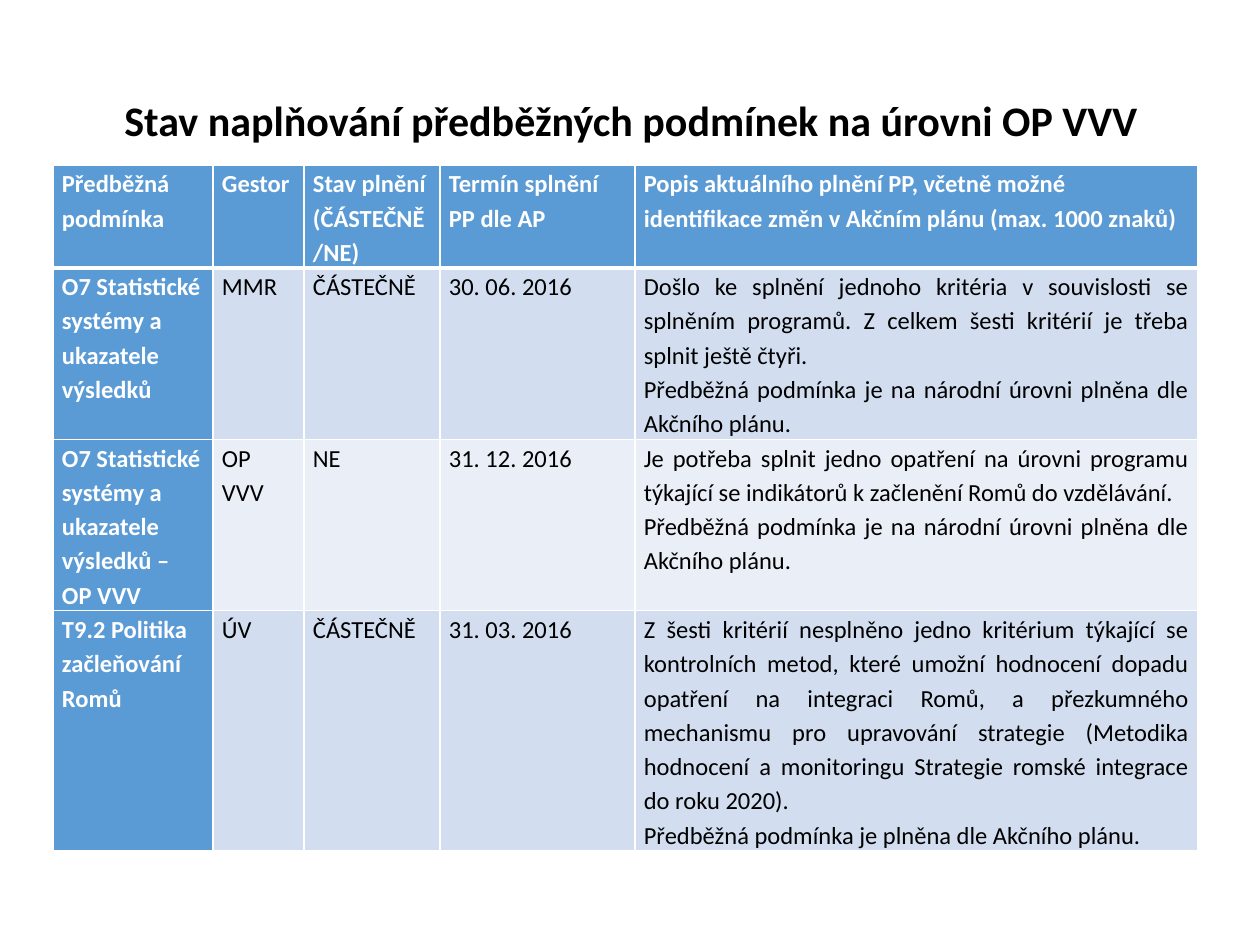
from lxml.etree import SubElement
from pptx import Presentation
from pptx.dml.color import RGBColor
from pptx.enum.text import MSO_ANCHOR, PP_ALIGN
from pptx.oxml.ns import qn
from pptx.util import Emu, Pt

PX_PER_INCH = 126
COLORS = {
    "text": "000000",
    "white": "FFFFFF",
    "accent": "5B9BD5",
    "band_dark": "D2DEEF",
    "band_light": "EAEFF7",
}

TITLE = "Stav naplňování předběžných podmínek na úrovni OP VVV"
COLUMN_WIDTHS = [160, 91, 136, 195, 563]
ROW_HEIGHTS = [89, 150, 150, 210]
HEADER_JUSTIFIED = {0, 2}
BODY_JUSTIFIED = {2, 4}
NATIONAL_LEVEL = "Předběžná podmínka je na národní úrovni plněna dle Akčního plánu."
CONDITIONS = [
    ["Předběžná podmínka", "Gestor", "Stav plnění\n(ČÁSTEČNĚ/NE)",
     "Termín splnění PP dle AP",
     "Popis aktuálního plnění PP, včetně možné identifikace změn "
     "v Akčním plánu (max. 1000 znaků)"],
    ["O7 Statistické systémy a ukazatele výsledků", "MMR", "ČÁSTEČNĚ",
     "30. 06. 2016",
     "Došlo ke splnění jednoho kritéria v souvislosti se splněním programů. "
     "Z celkem šesti kritérií je třeba splnit ještě čtyři.\n" + NATIONAL_LEVEL],
    ["O7 Statistické systémy a ukazatele výsledků – OP VVV", "OP VVV", "NE",
     "31. 12. 2016",
     "Je potřeba splnit jedno opatření na úrovni programu týkající se "
     "indikátorů k začlenění Romů do vzdělávání.\n" + NATIONAL_LEVEL],
    ["T9.2 Politika začleňování Romů", "ÚV", "ČÁSTEČNĚ", "31. 03. 2016",
     "Z šesti kritérií nesplněno jedno kritérium týkající se kontrolních metod, "
     "které umožní hodnocení dopadu opatření na integraci Romů, a přezkumného "
     "mechanismu pro upravování strategie (Metodika hodnocení a monitoringu "
     "Strategie romské integrace do roku 2020).\n"
     "Předběžná podmínka je plněna dle Akčního plánu."],
]


def px(length):
    return Emu(round(length * 914400 / PX_PER_INCH))


def rgb(color):
    return RGBColor.from_string(COLORS[color])


def write(frame, text, *, size, color="text", bold=False,
          align=PP_ALIGN.LEFT, spacing=1.0):
    """Fill a text frame, one paragraph per line of text."""
    frame.word_wrap = True
    for index, line in enumerate(text.split("\n")):
        paragraph = frame.paragraphs[0] if index == 0 else frame.add_paragraph()
        paragraph.alignment = align
        paragraph.line_spacing = spacing
        run = paragraph.add_run()
        run.text = line
        run.font.name = "Calibri"
        run.font.size = Pt(size)
        run.font.bold = bold
        run.font.color.rgb = rgb(color)


def add_borders(cell, **widths):
    """Draw white cell borders; widths are points keyed by side."""
    properties = cell._tc.get_or_add_tcPr()
    for side in "LRTB":
        line = SubElement(properties, qn(f"a:ln{side}"),
                          w=str(Pt(widths.get(side, 1))))
        fill = SubElement(line, qn("a:solidFill"))
        SubElement(fill, qn("a:srgbClr"), val=COLORS["white"])


def place_title(slide, left, top, width, height):
    title = slide.shapes.title
    title.left, title.top = px(left), px(top)
    title.width, title.height = px(width), px(height)
    title.text_frame.vertical_anchor = MSO_ANCHOR.MIDDLE
    write(title.text_frame, TITLE, size=24, bold=True,
          align=PP_ALIGN.CENTER, spacing=0.9)


def format_cell(cell, text, row, column):
    is_heading = row == 0 or column == 0
    justified = HEADER_JUSTIFIED if row == 0 else BODY_JUSTIFIED
    cell.margin_left = cell.margin_right = px(9)
    cell.margin_top = cell.margin_bottom = 0
    add_borders(cell, T=3 if row == 1 else 1, B=3 if row == 0 else 1)
    cell.fill.solid()
    band = "band_dark" if row % 2 else "band_light"
    cell.fill.fore_color.rgb = rgb("accent" if is_heading else band)
    write(cell.text_frame, text, size=14, bold=is_heading, spacing=1.15,
          color="white" if is_heading else "text",
          align=PP_ALIGN.JUSTIFY if column in justified else PP_ALIGN.LEFT)


def add_conditions_table(slide, left, top, width, height):
    frame = slide.shapes.add_table(len(CONDITIONS), len(COLUMN_WIDTHS),
                                   px(left), px(top), px(width), px(height))
    table = frame.table
    table.first_col = True
    for column, column_width in zip(table.columns, COLUMN_WIDTHS):
        column.width = px(column_width)
    for row, row_height in zip(table.rows, ROW_HEIGHTS):
        row.height = px(row_height)
    frame.height = px(height)
    for row, condition in enumerate(CONDITIONS):
        for column, text in enumerate(condition):
            format_cell(table.cell(row, column), text, row, column)


def main():
    presentation = Presentation()
    presentation.slide_width, presentation.slide_height = px(1260), px(945)
    slide = presentation.slides.add_slide(presentation.slide_layouts[5])
    place_title(slide, 64, 81, 1134, 84)
    add_conditions_table(slide, 53, 165, sum(COLUMN_WIDTHS), 673)
    presentation.save("out.pptx")


if __name__ == "__main__":
    main()
